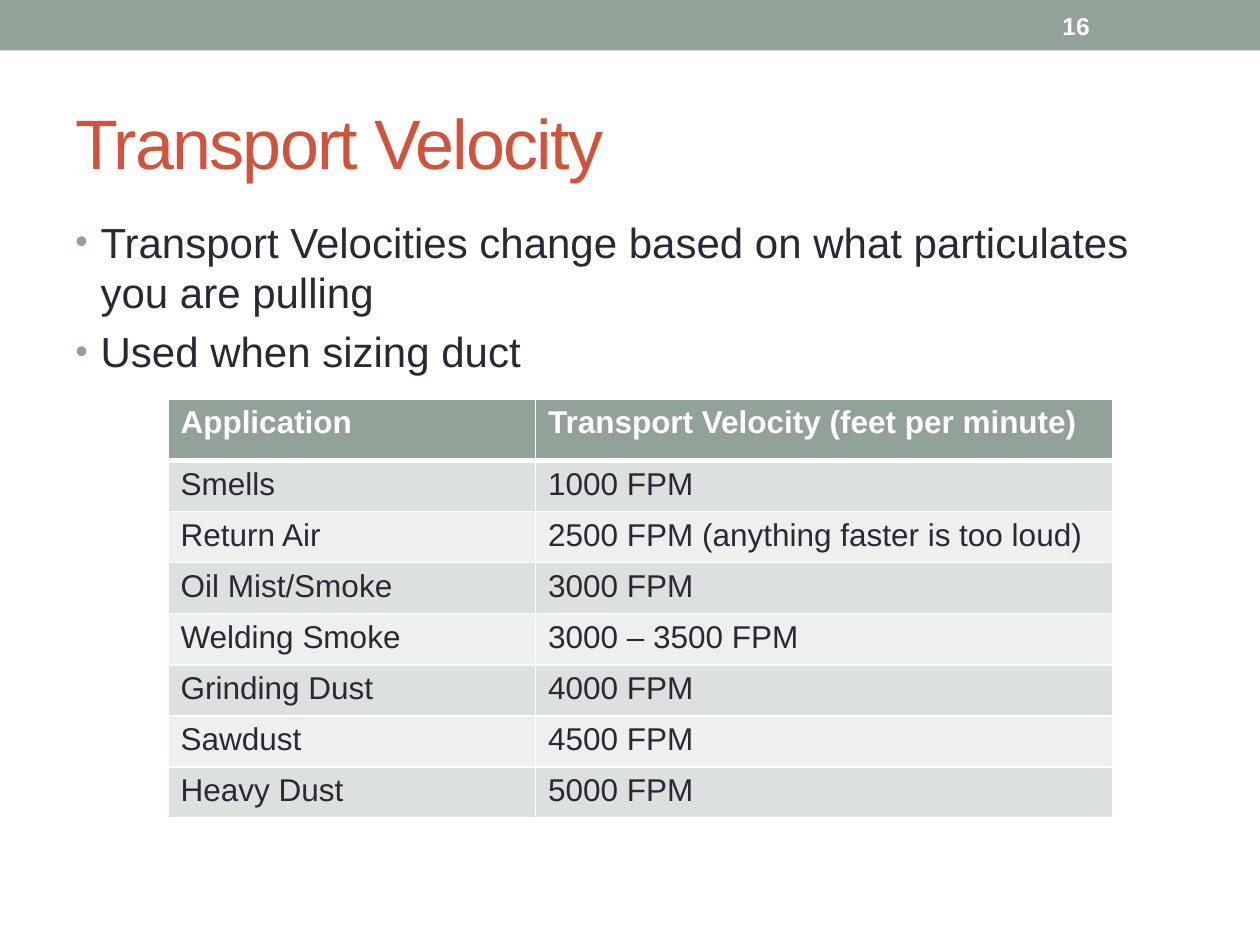
"""Build the Transport Velocity slide with its bullets and table."""
import pptx
import pptx.dml.color
import pptx.enum.shapes
import pptx.enum.text
import pptx.oxml
import pptx.oxml.ns
import pptx.util

Pt = pptx.util.Pt
MIDDLE = pptx.enum.text.MSO_ANCHOR.MIDDLE
FONT = "Arial"
COLORS = {
    "sage": "93A299",
    "title": "D2533C",
    "ink": "292934",
    "white": "FFFFFF",
    "dark_band": "DCE0DE",
    "light_band": "EEF0EF",
}
BULLETS = [
    "Transport Velocities change based on what particulates you are pulling",
    "Used when sizing duct",
]
VELOCITIES = [
    ("Application", "Transport Velocity (feet per minute)"),
    ("Smells", "1000 FPM"),
    ("Return Air", "2500 FPM (anything faster is too loud)"),
    ("Oil Mist/Smoke", "3000 FPM"),
    ("Welding Smoke", "3000 – 3500 FPM"),
    ("Grinding Dust", "4000 FPM"),
    ("Sawdust", "4500 FPM"),
    ("Heavy Dust", "5000 FPM"),
]
COLUMN_WIDTHS = (210, 330)
HEADER_HEIGHT, ROW_HEIGHT = 35, 29.25


def color(name):
    return pptx.dml.color.RGBColor.from_string(COLORS[name])


def paint(target, name):
    target.fill.solid()
    target.fill.fore_color.rgb = color(name)


def element(tag, attributes=""):
    namespace = pptx.oxml.ns.nsdecls("a")
    return pptx.oxml.parse_xml(f"<a:{tag} {namespace} {attributes}/>")


def style_text(frame, size, name, bold=False):
    for paragraph in frame.paragraphs:
        for span in paragraph.runs:
            span.font.name = FONT
            span.font.size = Pt(size)
            span.font.bold = bold
            span.font.color.rgb = color(name)


def add_band(page, width, height):
    band = page.shapes.add_shape(
        pptx.enum.shapes.MSO_SHAPE.RECTANGLE, 0, 0, Pt(width), Pt(height))
    band.shadow.inherit = False
    paint(band, "sage")
    band.line.fill.background()


def add_text(page, text, bounds, size, name, bold=False, anchor=None):
    box = page.shapes.add_textbox(*map(Pt, bounds))
    frame = box.text_frame
    frame.word_wrap = True
    frame.vertical_anchor = anchor
    frame.text = text
    style_text(frame, size, name, bold)
    return frame


def add_bullets(frame):
    for paragraph in frame.paragraphs:
        paragraph.space_before = Pt(5)
        properties = paragraph._p.get_or_add_pPr()
        properties.set("marL", str(Pt(14.4)))
        properties.set("indent", str(-Pt(14.4)))
        bullet_color = element("buClr")
        bullet_color.append(element("srgbClr", f'val="{COLORS["sage"]}"'))
        properties.append(bullet_color)
        properties.append(element("buSzPct", 'val="85000"'))
        properties.append(element("buFont", f'typeface="{FONT}"'))
        properties.append(element("buChar", 'char="•"'))


def add_borders(cell, widths):
    properties = cell._tc.get_or_add_tcPr()
    for position, (side, width) in enumerate(widths.items()):
        line = element(f"ln{side}", f'w="{Pt(width)}"')
        fill = element("solidFill")
        fill.append(element("srgbClr", f'val="{COLORS["white"]}"'))
        line.append(fill)
        properties.insert(position, line)


def add_velocity_table(page, left, top):
    height = HEADER_HEIGHT + ROW_HEIGHT * (len(VELOCITIES) - 1)
    table = page.shapes.add_table(
        len(VELOCITIES), len(COLUMN_WIDTHS), Pt(left), Pt(top),
        Pt(sum(COLUMN_WIDTHS)), Pt(height)).table
    for column, width in zip(table.columns, COLUMN_WIDTHS):
        column.width = Pt(width)
    for index, values in enumerate(VELOCITIES):
        header = index == 0
        table.rows[index].height = Pt(HEADER_HEIGHT if header else ROW_HEIGHT)
        band = "sage" if header else "dark_band" if index % 2 else "light_band"
        borders = {"L": 1, "R": 1, "T": 3 if index == 1 else 1, "B": 3 if header else 1}
        for cell, value in zip(table.rows[index].cells, values):
            cell.text_frame.text = value
            style_text(cell.text_frame, 18, "white" if header else "ink", header)
            paint(cell, band)
            add_borders(cell, borders)


def main():
    deck = pptx.Presentation()
    deck.slide_width, deck.slide_height = Pt(720), Pt(540)
    page = deck.slides.add_slide(deck.slide_layouts[6])
    add_band(page, 720, 28.8)
    title = add_text(page, "Transport Velocity", (36, 42, 648, 78), 40, "title", anchor=MIDDLE)
    title.paragraphs[0].runs[0].font._element.set("spc", "-100")
    add_bullets(add_text(page, "\n".join(BULLETS), (36, 120, 648, 96), 24, "ink"))
    add_velocity_table(page, 96, 228)
    add_text(page, "16", (600, 1.5, 84, 26), 14, "white", bold=True, anchor=MIDDLE)
    deck.save("out.pptx")


if __name__ == "__main__":
    main()
